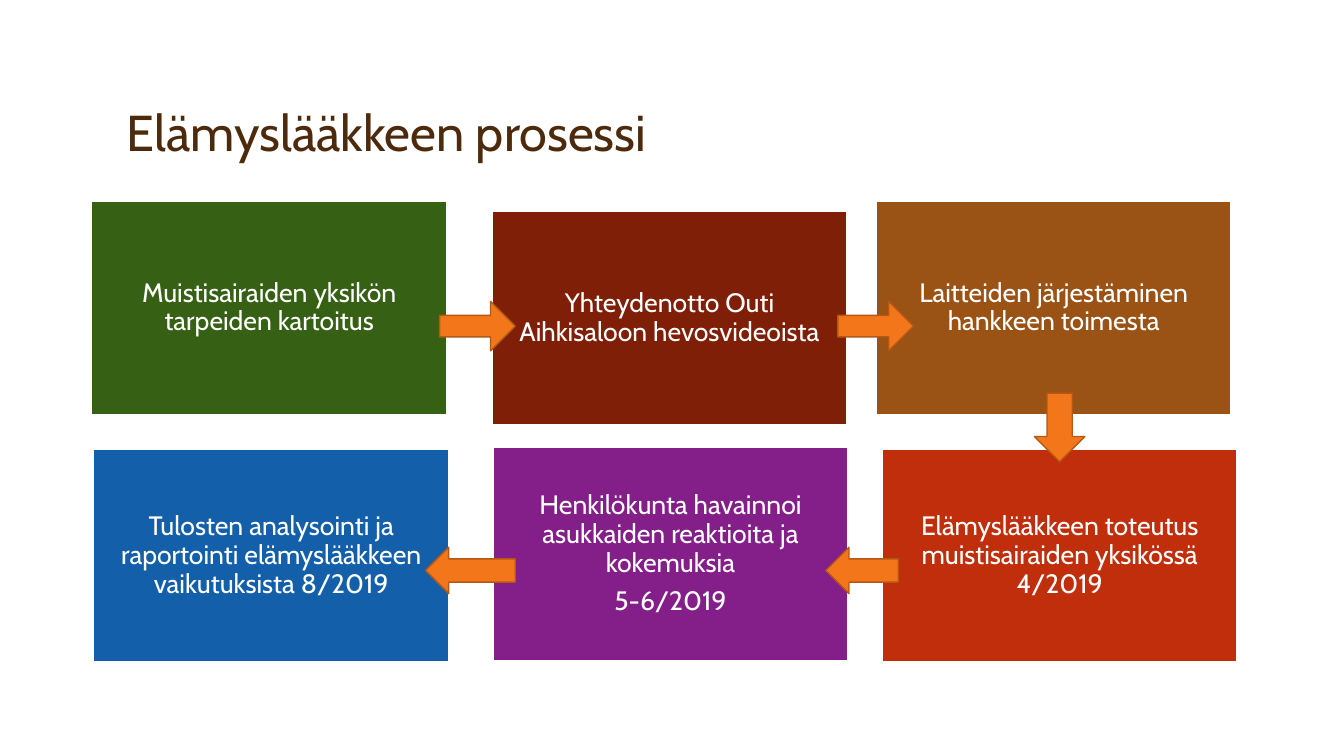
from pptx import Presentation
from pptx.dml.color import RGBColor
from pptx.enum.shapes import MSO_SHAPE
from pptx.enum.text import MSO_ANCHOR, PP_ALIGN
from pptx.util import Inches, Pt

FONT = "Cabin"
WHITE = RGBColor(0xFF, 0xFF, 0xFF)
BROWN = RGBColor(0x4D, 0x2A, 0x0B)
GREEN = RGBColor(0x36, 0x60, 0x13)
MAROON = RGBColor(0x80, 0x1F, 0x08)
OCHRE = RGBColor(0x9A, 0x53, 0x15)
RED = RGBColor(0xC0, 0x2E, 0x0C)
PURPLE = RGBColor(0x84, 0x1E, 0x89)
BLUE = RGBColor(0x14, 0x5F, 0xAA)
ORANGE = RGBColor(0xF3, 0x77, 0x1A)
DARK_ORANGE = RGBColor(0xB4, 0x58, 0x13)

STEP_WIDTH, STEP_HEIGHT = 3.52, 2.11
STEPS = [
    (4.88, 2.1, MAROON, ["Yhteydenotto Outi Aihkisaloon hevosvideoista"]),
    (0.91, 2, GREEN, ["Muistisairaiden yksikön tarpeiden kartoitus"]),
    (8.69, 2, OCHRE, ["Laitteiden järjestäminen hankkeen toimesta"]),
    (8.75, 4.46, RED, ["Elämyslääkkeen toteutus muistisairaiden yksikössä 4/2019"]),
    (4.89, 4.44, PURPLE,
     ["Henkilökunta havainnoi asukkaiden reaktioita ja kokemuksia", "5-6/2019"]),
    (0.93, 4.46, BLUE,
     ["Tulosten analysointi ja raportointi elämyslääkkeen vaikutuksista 8/2019"]),
]
ARROWS = [
    (MSO_SHAPE.RIGHT_ARROW, 4.36, 2.99, 0.75, 0.49, 0.433),
    (MSO_SHAPE.RIGHT_ARROW, 8.31, 2.99, 0.75, 0.49, 0.433),
    (MSO_SHAPE.DOWN_ARROW, 10.26, 3.9, 0.5, 0.68, 0.5),
    (MSO_SHAPE.LEFT_ARROW, 8.19, 5.43, 0.72, 0.46, 0.5),
    (MSO_SHAPE.LEFT_ARROW, 4.22, 5.43, 0.89, 0.46, 0.5),
]


def style_paragraph(paragraph, text, size, color, align):
    paragraph.text = text
    paragraph.alignment = align
    paragraph.line_spacing = 0.9
    paragraph.font.name = FONT
    paragraph.font.size = Pt(size)
    paragraph.font.color.rgb = color


def add_filled_shape(slide, preset, left, top, width, height, fill, line):
    shape = slide.shapes.add_shape(
        preset, Inches(left), Inches(top), Inches(width), Inches(height))
    shape.shadow.inherit = False
    shape.fill.solid()
    shape.fill.fore_color.rgb = fill
    shape.line.color.rgb = line
    shape.line.width = Pt(1)
    return shape


def add_title(slide, text):
    title = slide.shapes.add_textbox(Inches(1.16), Inches(0.33), Inches(11), Inches(1.33))
    frame = title.text_frame
    frame.word_wrap = True
    frame.vertical_anchor = MSO_ANCHOR.BOTTOM
    style_paragraph(frame.paragraphs[0], text, 36, BROWN, PP_ALIGN.LEFT)


def add_step(slide, left, top, fill, lines):
    step = add_filled_shape(slide, MSO_SHAPE.RECTANGLE, left, top,
                            STEP_WIDTH, STEP_HEIGHT, fill, WHITE)
    frame = step.text_frame
    frame.word_wrap = True
    frame.vertical_anchor = MSO_ANCHOR.MIDDLE
    frame.margin_left = frame.margin_right = Inches(0.08)
    frame.margin_top = frame.margin_bottom = Inches(0.08)
    for index, line in enumerate(lines):
        paragraph = frame.add_paragraph() if index else frame.paragraphs[0]
        style_paragraph(paragraph, line, 19, WHITE, PP_ALIGN.CENTER)
        paragraph.space_after = Pt(6.65)


def add_arrow(slide, preset, left, top, width, height, shaft):
    """Draw a block arrow; shaft is the shaft's share of the arrow's thickness."""
    arrow = add_filled_shape(slide, preset, left, top, width, height, ORANGE, DARK_ORANGE)
    arrow.adjustments[0] = shaft


def main():
    presentation = Presentation()
    presentation.slide_width = Inches(13.33)
    presentation.slide_height = Inches(7.5)
    slide = presentation.slides.add_slide(presentation.slide_layouts[6])
    add_title(slide, "Elämyslääkkeen prosessi")
    for step in STEPS:
        add_step(slide, *step)
    for arrow in ARROWS:
        add_arrow(slide, *arrow)
    presentation.save("out.pptx")


if __name__ == "__main__":
    main()
